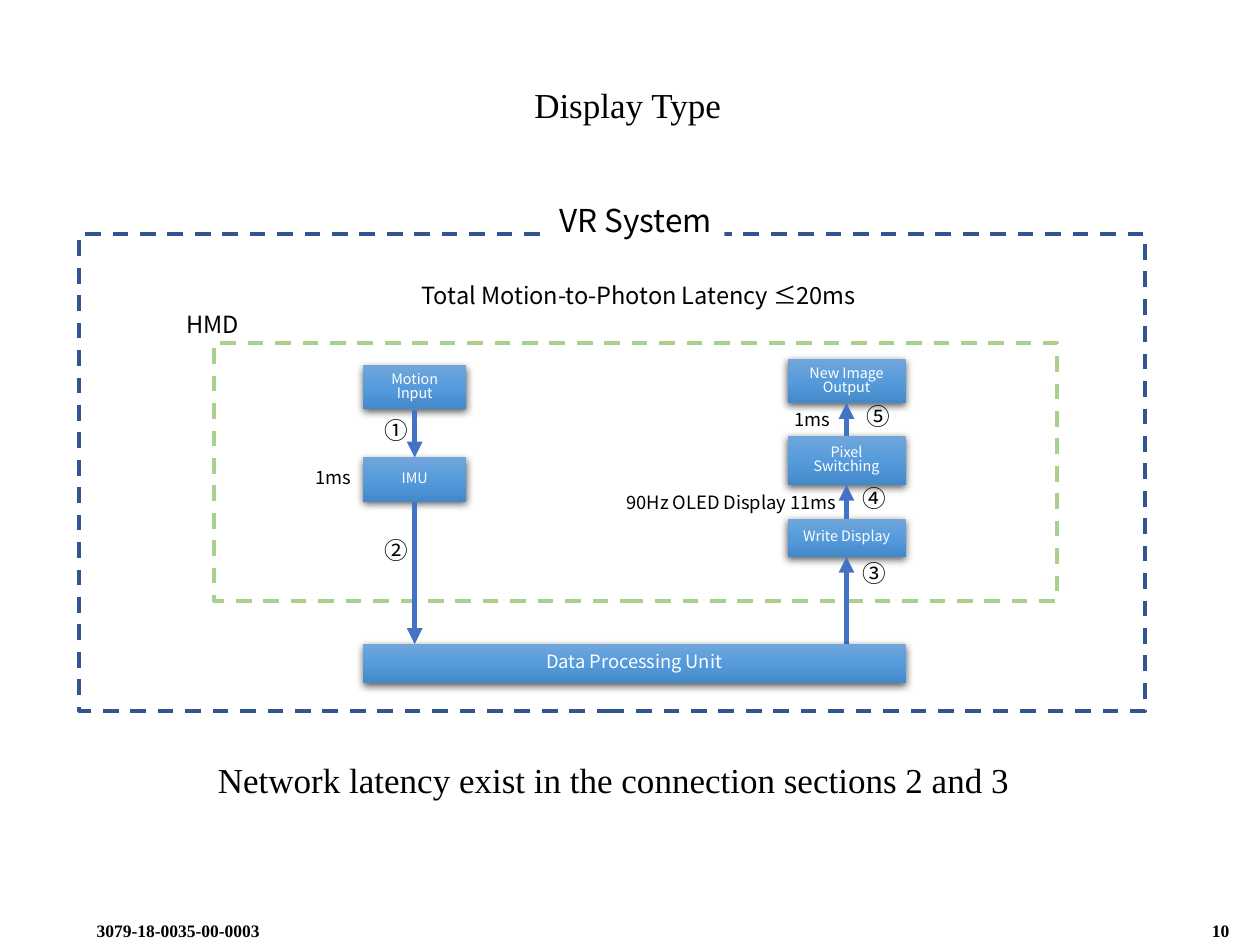
from lxml import etree
from pptx import Presentation
from pptx.dml.color import RGBColor
from pptx.enum.dml import MSO_LINE
from pptx.enum.shapes import MSO_CONNECTOR, MSO_SHAPE
from pptx.enum.text import MSO_ANCHOR, MSO_AUTO_SIZE, PP_ALIGN
from pptx.oxml import parse_xml
from pptx.oxml.ns import nsdecls, qn
from pptx.util import Pt

LEFT, CENTER = PP_ALIGN.LEFT, PP_ALIGN.CENTER
TOP, MIDDLE = MSO_ANCHOR.TOP, MSO_ANCHOR.MIDDLE
RECT, STRAIGHT = MSO_SHAPE.RECTANGLE, MSO_CONNECTOR.STRAIGHT
SANS, SERIF = "Noto Sans CJK KR", "Times New Roman"
GRADIENT = ((0, "71A6DB"), (50, "559BDB"), (100, "448ACA"))


def rgb(value):
    return RGBColor.from_string(value)


def write(shape, text, size=13.5, font=SANS, color="000000", bold=False,
          align=LEFT, anchor=TOP, spacing=0.9, wrap=False,
          insets=(7.2, 3.6, 7.2, 3.6)):
    """Fill a shape with text, one paragraph per line."""
    tf = shape.text_frame
    tf.auto_size = MSO_AUTO_SIZE.NONE
    tf.word_wrap = wrap
    tf.vertical_anchor = anchor
    (tf.margin_left, tf.margin_top,
     tf.margin_right, tf.margin_bottom) = map(Pt, insets)
    for i, line in enumerate(text.split("\n")):
        p = tf.add_paragraph() if i else tf.paragraphs[0]
        p.alignment = align
        p.line_spacing = spacing
        p.space_before = Pt(0)
        r = p.add_run()
        r.text = line
        r.font.size = Pt(size)
        r.font.bold = bold
        r.font.color.rgb = rgb(color)
        r.font.name = font
        # East Asian face, used for the circled numbers
        etree.SubElement(r.font._element, qn("a:ea")).set("typeface", font)


class Diagram:
    arrow_color = "4472C4"
    arrow_width = 3
    frame_width = 2.25

    def __init__(self, prs):
        self.s = prs.slides.add_slide(prs.slide_layouts[5])

    def title(self, text, x, y, w, h, **style):
        sp = self.s.shapes.title
        sp.left, sp.top, sp.width, sp.height = map(Pt, (x, y, w, h))
        write(sp, text, **style)

    def label(self, text, x, y, w, h, **style):
        sp = self.s.shapes.add_textbox(*map(Pt, (x, y, w, h)))
        write(sp, text, **style)
        return sp

    def rect(self, x, y, w, h):
        sp = self.s.shapes.add_shape(RECT, *map(Pt, (x, y, w, h)))
        sp.shadow.inherit = False
        return sp

    def frame(self, x, y, w, h, color):
        sp = self.rect(x, y, w, h)
        sp.fill.background()
        sp.line.color.rgb = rgb(color)
        sp.line.width = Pt(self.frame_width)
        sp.line.dash_style = MSO_LINE.DASH

    def box(self, text, x, y, w, h, size=8.2):
        sp = self.rect(x, y, w, h)
        sp.line.fill.background()
        sp.fill.gradient()
        sp.fill.gradient_angle = 270
        spPr = sp._element.spPr
        stops = spPr.find(qn("a:gradFill")).find(qn("a:gsLst"))
        for stop in list(stops):
            stops.remove(stop)
        for pos, color in GRADIENT:
            stops.append(parse_xml(
                f'<a:gs {nsdecls("a")} pos="{pos * 1000}">'
                f'<a:srgbClr val="{color}"/></a:gs>'))
        spPr.find(qn("a:effectLst")).append(parse_xml(
            f'<a:outerShdw {nsdecls("a")} blurRad="{Pt(4.5)}" '
            f'dist="{Pt(1.5)}" dir="5400000" algn="ctr" rotWithShape="0">'
            '<a:srgbClr val="000000"><a:alpha val="63000"/></a:srgbClr>'
            '</a:outerShdw>'))
        write(sp, text, size=size, color="FFFFFF", align=CENTER,
              anchor=MIDDLE, spacing=0.8, insets=(0, 0, 0, 0))

    def arrow(self, x, y1, y2):
        c = self.s.shapes.add_connector(STRAIGHT, *map(Pt, (x, y1, x, y2)))
        c.line.color.rgb = rgb(self.arrow_color)
        c.line.width = Pt(self.arrow_width)
        etree.SubElement(c.line._get_or_add_ln(), qn("a:tailEnd")).set(
            "type", "triangle")
        etree.SubElement(c._element.spPr, qn("a:effectLst"))


def main():
    prs = Presentation()
    prs.slide_width, prs.slide_height = Pt(720), Pt(540)
    d = Diagram(prs)

    # Title, conclusion and footer
    serif = dict(size=20, font=SERIF, spacing=1, insets=(7.2, 6, 7.2, 0))
    d.title("Display Type", 298.1, 41.8, 122.4, 31.7, **serif)
    d.label("Network latency exist in the connection sections 2 and 3",
            117.4, 427.7, 470, 31.7, **serif)
    footer = dict(size=10, font=SERIF, bold=True, spacing=1)
    d.label("3079-18-0035-00-0003", 48.2, 522, 378, 18, **footer)
    d.label("10", 685.4, 522, 34.6, 18, **footer)

    # System and headset frames
    d.frame(122.4, 195.8, 481.7, 147.6, "A9D18E")
    d.frame(45.4, 133.9, 609.1, 272.2, "325491")
    heading = d.label("VR System", 312.5, 113.8, 101.5, 28.8,
                      size=18, align=CENTER)
    heading.fill.solid()
    heading.fill.fore_color.rgb = rgb("FFFFFF")
    d.label("HMD", 99.4, 175.7, 46.8, 23.8)
    d.label("Total Motion-to-Photon Latency ≤20ms",
            203, 159.1, 324, 23.8, align=CENTER, wrap=True)

    # Processing columns: x, width, boxes in flow order (text, top, height)
    unit_x, unit_y, unit_w, unit_h = 207.5, 368, 310, 22.3
    inputs = [("Motion\nInput", 208.8, 25.2), ("IMU", 261.4, 25.2)]
    outputs = [("Write Display", 296.6, 21.6),
               ("Pixel\nSwitching", 249.1, 28),
               ("New Image\nOutput", 205.2, 25.2)]
    for x, w, column in ((unit_x, 59, inputs), (450, 67.5, outputs)):
        for text, y, h in column:
            d.box(text, x, y, w, h)
        center = x + w / 2
        # Downwards into the unit on the left, upwards out of it on the right
        if column is inputs:
            tops = [y for _, y, _ in column[1:]] + [unit_y]
            links = [(y + h, top) for (_, y, h), top in zip(column, tops)]
        else:
            starts = [unit_y] + [y for _, y, _ in column[:-1]]
            links = [(start, y + h) for start, (_, y, h) in zip(starts, column)]
        for start, end in links:
            d.arrow(center, start, end)
    d.box("Data Processing Unit", unit_x, unit_y, unit_w, unit_h, size=10.5)

    # Section numbers
    for number, x, y in (("①", 212.4, 236.2), ("②", 212.4, 304.6),
                         ("③", 486, 317.5), ("④", 486, 275),
                         ("⑤", 488.2, 228.2)):
        d.label(number, x, y, 28.1, 23.8)

    # Latency of each step
    for text, x, y, w in (("1ms", 164.2, 264.2, 52.6),
                          ("1ms", 437.8, 231.1, 52.6),
                          ("90Hz OLED Display 11ms", 349.9, 278.6, 136.1)):
        d.label(text, x, y, w, 20.2, size=10.5, align=CENTER)

    prs.save("out.pptx")


if __name__ == "__main__":
    main()
